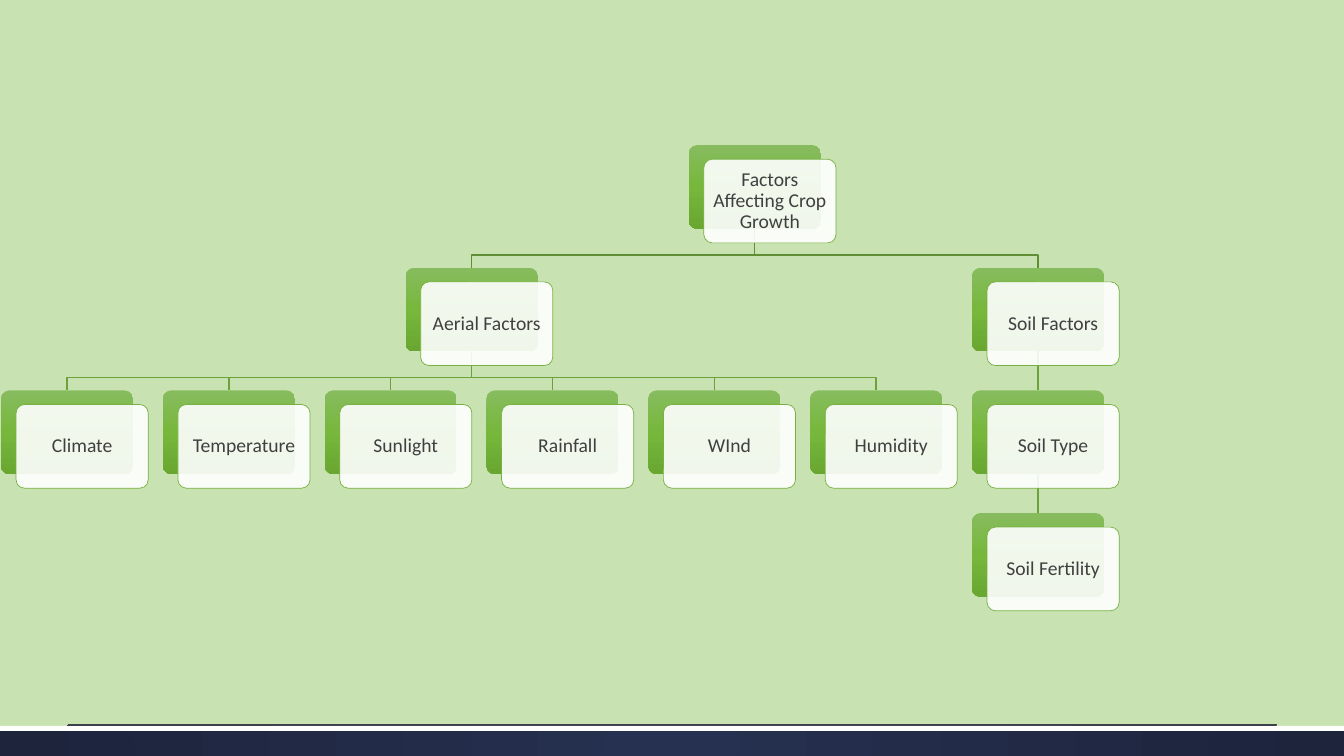
from lxml.etree import SubElement
from pptx import Presentation
from pptx.dml.color import RGBColor
from pptx.enum.shapes import MSO_CONNECTOR, MSO_SHAPE
from pptx.enum.text import MSO_ANCHOR, PP_ALIGN
from pptx.oxml import parse_xml
from pptx.oxml.ns import nsdecls, qn
from pptx.util import Inches, Pt

PALE_GREEN = RGBColor(0xC9, 0xE2, 0xB1)
LEAF_TOP = RGBColor(0x87, 0xBC, 0x5E)
LEAF_MIDDLE = RGBColor(0x77, 0xB7, 0x3C)
LEAF_BOTTOM = RGBColor(0x69, 0xA7, 0x31)
CARD_EDGE = RGBColor(0x77, 0xB1, 0x42)
ROOT_BRANCH = RGBColor(0x5F, 0x8E, 0x35)
FACTOR_BRANCH = RGBColor(0x6C, 0xA1, 0x3C)
NAVY_CENTRE = RGBColor(0x26, 0x30, 0x50)
NAVY_EDGE = RGBColor(0x1D, 0x24, 0x3C)
WHITE = RGBColor(0xFF, 0xFF, 0xFF)
CHARCOAL = RGBColor(0x40, 0x40, 0x40)

CARD_WIDTH, CARD_HEIGHT = 1.31, 0.83
FIRST_LEFT, FIRST_TOP = 0.01, 1.44
COLUMN_STEP = (9.64 - FIRST_LEFT) / 6
ROW_STEP = (5.09 - FIRST_TOP) / 3
OFFSET_X, OFFSET_Y = 0.15, 0.14
BEND_DROP = 0.26

prs = Presentation()
prs.slide_width, prs.slide_height = Inches(13.33), Inches(7.5)
slide = prs.slides.add_slide(prs.slide_layouts[6])
slide.background.fill.solid()
slide.background.fill.fore_color.rgb = PALE_GREEN


def add_block(kind, left, top, width, height):
    block = slide.shapes.add_shape(
        kind, Inches(left), Inches(top), Inches(width), Inches(height))
    block.shadow.inherit = False
    block.fill.solid()
    block.fill.fore_color.rgb = WHITE
    block.line.fill.background()
    return block


def paint_gradient(block, colours, direction):
    block.fill.gradient()
    stops = "".join(
        f'<a:gs pos="{100000 * i // (len(colours) - 1)}"><a:srgbClr val="{colour}"/></a:gs>'
        for i, colour in enumerate(colours))
    gradient = parse_xml(
        f'<a:gradFill {nsdecls("a")} rotWithShape="1"><a:gsLst>{stops}</a:gsLst>{direction}</a:gradFill>')
    properties = block._element.spPr
    properties.replace(properties.find(qn("a:gradFill")), gradient)


footer_band = add_block(MSO_SHAPE.RECTANGLE, 0, 7.2, 13.33, 0.3)
paint_gradient(
    footer_band, [NAVY_CENTRE, NAVY_EDGE],
    '<a:path path="circle"><a:fillToRect l="50000" t="50000" r="50000" b="50000"/></a:path>')
add_block(MSO_SHAPE.RECTANGLE, 0, 7.2, 13.33, 0.05)
footer_rule = slide.shapes.add_connector(
    MSO_CONNECTOR.STRAIGHT, Inches(0.67), Inches(7.19), Inches(12.67), Inches(7.19))
footer_rule.line.color.rgb = CHARCOAL
footer_rule.line.width = Pt(0.75)
SubElement(footer_rule._element.spPr, qn("a:effectLst"))

ROOT = "Factors Affecting Crop Growth"
factors = [
    (ROOT, None, 4.25, 0),
    ("Aerial Factors", ROOT, 2.5, 1),
    ("Climate", "Aerial Factors", 0, 2),
    ("Temperature", "Aerial Factors", 1, 2),
    ("Sunlight", "Aerial Factors", 2, 2),
    ("Rainfall", "Aerial Factors", 3, 2),
    ("WInd", "Aerial Factors", 4, 2),
    ("Humidity", "Aerial Factors", 5, 2),
    ("Soil Factors", ROOT, 6, 1),
    ("Soil Type", "Soil Factors", 6, 2),
    ("Soil Fertility", "Soil Type", 6, 3),
]

leaves = {}
for factor, parent, column, row in factors:
    leaf = add_block(
        MSO_SHAPE.ROUNDED_RECTANGLE, FIRST_LEFT + column * COLUMN_STEP,
        FIRST_TOP + row * ROW_STEP, CARD_WIDTH, CARD_HEIGHT)
    leaf.adjustments[0] = 0.1
    paint_gradient(leaf, [LEAF_TOP, LEAF_MIDDLE, LEAF_BOTTOM],
                   '<a:lin ang="5400000" scaled="0"/>')
    leaves[factor] = leaf

for factor, parent, column, row in factors:
    if parent is None:
        continue
    upper, lower = leaves[parent], leaves[factor]
    start_x, end_x = upper.left + upper.width // 2, lower.left + lower.width // 2
    start_y, end_y = upper.top + upper.height, lower.top
    if start_x == end_x:
        branch = slide.shapes.add_connector(
            MSO_CONNECTOR.STRAIGHT, start_x, start_y, end_x, end_y)
        branch.begin_connect(upper, 2)
        branch.end_connect(lower, 0)
    else:
        bend_y = start_y + Inches(BEND_DROP)
        outline = slide.shapes.build_freeform(start_x, start_y)
        outline.add_line_segments(
            [(start_x, bend_y), (end_x, bend_y), (end_x, end_y)], close=False)
        branch = outline.convert_to_shape()
        branch.fill.background()
    branch.line.color.rgb = ROOT_BRANCH if parent == ROOT else FACTOR_BRANCH
    branch.line.width = Pt(1)
    SubElement(branch._element.spPr, qn("a:effectLst"))

for factor, parent, column, row in factors:
    card = add_block(
        MSO_SHAPE.ROUNDED_RECTANGLE, FIRST_LEFT + column * COLUMN_STEP + OFFSET_X,
        FIRST_TOP + row * ROW_STEP + OFFSET_Y, CARD_WIDTH, CARD_HEIGHT)
    card.adjustments[0] = 0.1
    white = card._element.spPr.find(qn("a:solidFill")).find(qn("a:srgbClr"))
    SubElement(white, qn("a:alpha")).set("val", "90000")
    card.line.color.rgb = CARD_EDGE
    card.line.width = Pt(0.5)
    label = card.text_frame
    label.word_wrap = True
    label.vertical_anchor = MSO_ANCHOR.MIDDLE
    label.margin_left = label.margin_right = Inches(0.06)
    label.margin_top = label.margin_bottom = Inches(0.06)
    label.text = factor
    paragraph = label.paragraphs[0]
    paragraph.alignment = PP_ALIGN.CENTER
    paragraph.line_spacing = 0.9
    paragraph.font.name = "Calibri"
    paragraph.font.size = Pt(14)
    paragraph.font.color.rgb = CHARCOAL

prs.save("out.pptx")
